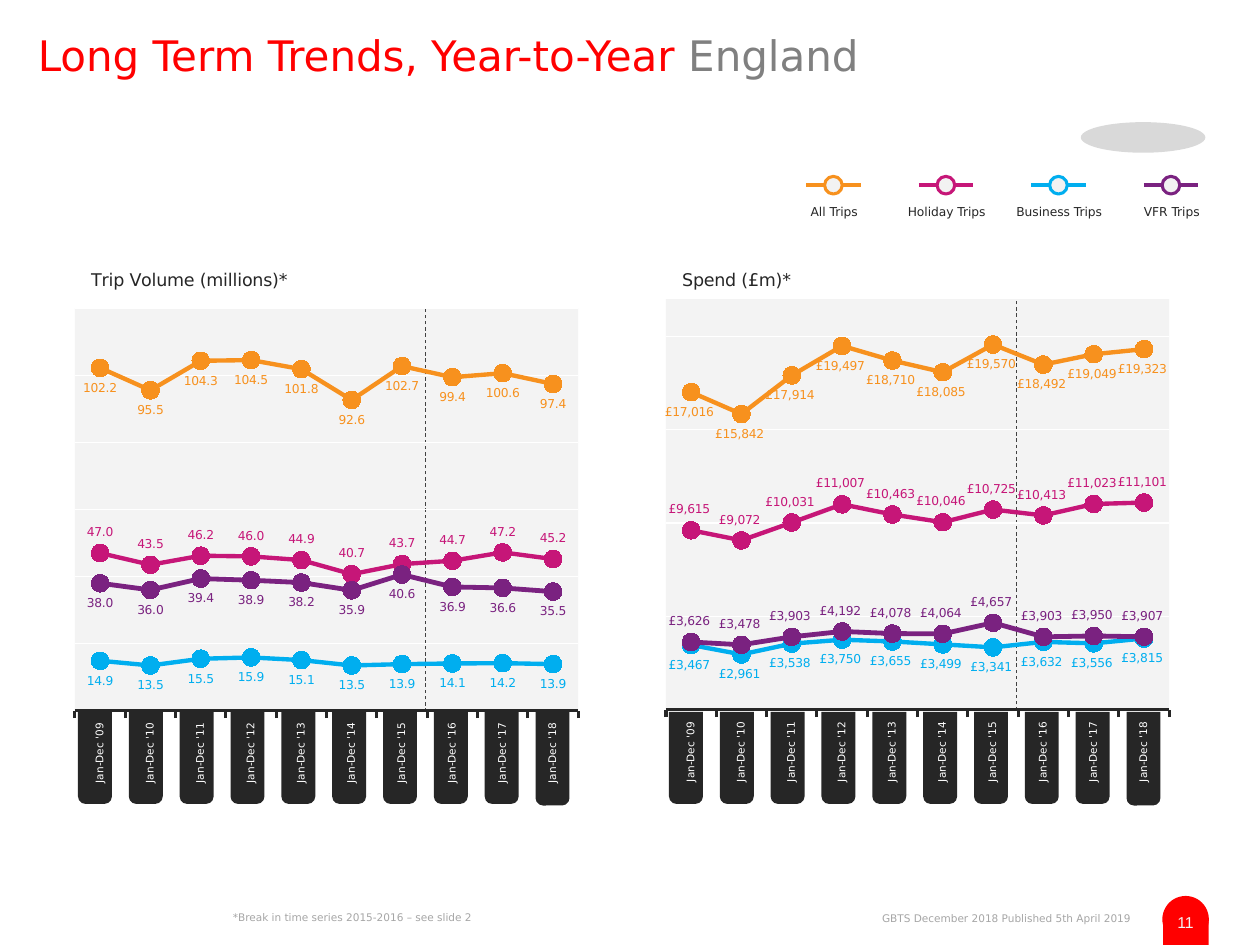
from copy import deepcopy
from dataclasses import dataclass

from lxml import etree
from pptx import Presentation
from pptx import util as u
from pptx.chart.data import CategoryChartData
from pptx.dml.color import RGBColor
from pptx.enum import chart as ch, dml, shapes, text
from pptx.oxml import parse_xml
from pptx.oxml.ns import nsdecls, qn

Pt = u.Pt
BELOW, ABOVE = ch.XL_LABEL_POSITION.BELOW, ch.XL_LABEL_POSITION.ABOVE
LEFT, CENTER, RIGHT = text.PP_ALIGN.LEFT, text.PP_ALIGN.CENTER, text.PP_ALIGN.RIGHT


@dataclass(frozen=True)
class Theme:
    font: str = "DejaVu Sans"
    number_font: str = "Arial"
    red: str = "FF0000"
    grey: str = "808080"
    note: str = "A6A6A6"
    dark: str = "262626"
    pale: str = "F2F2F2"
    plot: str = "D9D9D9"
    white: str = "FFFFFF"
    black: str = "000000"
    all_trips: str = "F7911E"
    holiday: str = "C61678"
    business: str = "00AEEF"
    vfr: str = "7A2280"
    title_size: float = 24
    chart_title_size: float = 10
    page_size: float = 9
    label_size: float = 7
    small_size: float = 6


T = Theme()
SERIES_COLORS = [T.all_trips, T.holiday, T.business, T.vfr]


def rgb(value):
    return RGBColor.from_string(value)


def set_alpha(fill_parent, percent):
    color = fill_parent.find(".//" + qn("a:srgbClr"))
    etree.SubElement(color, qn("a:alpha"), val=str(percent * 1000))


def layout_xml(x, y, w=None, h=None):
    inner = '<c:layoutTarget val="inner"/>' if w else ""
    modes = '<c:xMode val="edge"/><c:yMode val="edge"/>'
    parts = [("x", x), ("y", y), ("w", w), ("h", h)]
    sizes = "".join(f'<c:{k} val="{v}"/>' for k, v in parts if v is not None)
    return parse_xml(f'<c:layout {nsdecls("c")}><c:manualLayout>{inner}{modes}{sizes}'
                     "</c:manualLayout></c:layout>")


def set_layout(parent, index, layout):
    for old in parent.findall(qn("c:layout")):
        parent.remove(old)
    parent.insert(index, layout)


class Deck:
    def __init__(self, theme):
        self.t = theme
        self.prs = Presentation()
        self.prs.slide_width, self.prs.slide_height = Pt(720), Pt(540)
        self.s = self.prs.slides.add_slide(self.prs.slide_layouts[5])

    def style(self, font, size, color, name=None):
        font.size, font.name, font.bold = Pt(size), name or self.t.font, False
        font.color.rgb = rgb(color)

    def title(self, parts):
        sp = self.s.shapes.title
        sp.left, sp.top, sp.width, sp.height = Pt(0), Pt(0), Pt(720), Pt(101.5)
        tf = sp.text_frame
        tf.margin_left = tf.margin_right = Pt(21.6)
        tf.margin_top, tf.margin_bottom = Pt(16.6), Pt(0)
        tf.vertical_anchor, tf.word_wrap = text.MSO_ANCHOR.TOP, True
        p = tf.paragraphs[0]
        p.alignment, p.space_after = LEFT, Pt(6)
        for words, color in parts:
            r = p.add_run()
            r.text = words
            self.style(r.font, self.t.title_size, color)

    def text(self, x, y, w, h, words, size, color, align=LEFT, parent=None):
        tf = (parent or self.s).shapes.add_textbox(Pt(x), Pt(y), Pt(w), Pt(h)).text_frame
        tf.word_wrap = True
        tf.text = words
        tf.paragraphs[0].alignment = align
        self.style(tf.paragraphs[0].runs[0].font, size, color)

    def shape(self, kind, x, y, w, h, fill, line=None, parent=None):
        sp = (parent or self.s).shapes.add_shape(kind, Pt(x), Pt(y), Pt(w), Pt(h))
        sp.shadow.inherit = False
        sp.fill.solid()
        sp.fill.fore_color.rgb = rgb(fill)
        if line:
            sp.line.color.rgb, sp.line.width = rgb(line), Pt(1.75)
        else:
            sp.line.fill.background()
        return sp

    def line(self, x1, y1, x2, y2, color, width, dash=None, parent=None):
        cx = (parent or self.s).shapes.add_connector(
            shapes.MSO_CONNECTOR.STRAIGHT, Pt(x1), Pt(y1), Pt(x2), Pt(y2))
        cx.line.color.rgb, cx.line.width = rgb(color), Pt(width)
        if dash:
            cx.line.dash_style = dash
        etree.SubElement(cx._element.spPr, qn("a:effectLst"))

    def chart(self, x, title, title_at, plot_at, cats, rows, places, top, step, fmt):
        data = CategoryChartData(number_format=fmt)
        data.categories = cats
        for i, row in enumerate(rows, 1):
            data.add_series(f"Series {i}", row)
        c = self.s.shapes.add_chart(ch.XL_CHART_TYPE.LINE_MARKERS, Pt(x), Pt(139),
                                    Pt(309.6), Pt(319.7), data).chart
        self.style(c.font, 18, self.t.black)
        c.has_legend = False
        # Title and plot area
        c.has_title = True
        tf = c.chart_title.text_frame
        tf.text = title
        self.style(tf.paragraphs[0].runs[0].font, self.t.chart_title_size, self.t.dark)
        set_layout(c.chart_title._element, 1, layout_xml(*title_at))
        area = c._chartSpace.chart.plotArea
        set_layout(area, 0, layout_xml(*plot_at))
        sp_pr = parse_xml(f'<c:spPr {nsdecls("c", "a")}><a:solidFill><a:srgbClr '
                          f'val="{self.t.plot}"/></a:solidFill></c:spPr>')
        set_alpha(sp_pr, 30)
        area.append(sp_pr)
        # Axes
        cat, val = c.category_axis, c.value_axis
        cat.major_tick_mark = ch.XL_TICK_MARK.OUTSIDE
        cat.format.line.color.rgb, cat.format.line.width = rgb(self.t.dark), Pt(1.75)
        self.style(cat.tick_labels.font, self.t.small_size, self.t.white)
        body = cat._element.find(qn("c:txPr")).find(qn("a:bodyPr"))
        body.set("rot", "-5400000")
        body.set("vert", "horz")
        val.minimum_scale, val.maximum_scale, val.major_unit = 0, top, step
        val.has_major_gridlines = True
        grid = val.major_gridlines.format.line
        grid.color.rgb, grid.width = rgb(self.t.white), Pt(0.75)
        val.visible = False
        # Series
        c.plots[0].vary_by_categories = False
        for ser, color, place in zip(c.plots[0].series, SERIES_COLORS, places):
            ser.smooth = False
            ser.format.line.color.rgb = rgb(color)
            ser.format.line.width = Pt(2.75 if color == self.t.vfr else 2.5)
            ser.marker.style, ser.marker.size = ch.XL_MARKER_STYLE.CIRCLE, 10
            ser.marker.format.fill.solid()
            ser.marker.format.fill.fore_color.rgb = rgb(self.t.pale)
            ser.marker.format.line.color.rgb = rgb(color)
            labels = ser.data_labels
            labels.show_value, labels.position = True, place
            labels.number_format, labels.number_format_is_linked = fmt, False
            self.style(labels.font, self.t.label_size, color)


def main():
    d = Deck(T)
    kind = shapes.MSO_SHAPE

    # Page number tab and footers
    d.shape(kind.RECTANGLE, 664.6, 524.9, 26, 15.6, T.red)
    badge = d.shape(kind.OVAL, 664.2, 512, 26.6, 26.6, T.red)
    tf = badge.text_frame
    tf.margin_left = tf.margin_right = tf.margin_bottom = Pt(0)
    tf.margin_top = Pt(2.9)
    tf.text = "11"
    tf.paragraphs[0].alignment = CENTER
    d.style(tf.paragraphs[0].runs[0].font, T.page_size, T.pale, T.number_font)
    d.text(115.9, 517.5, 537.1, 14.4, "GBTS December 2018 Published 5th April 2019",
           T.small_size, T.note, RIGHT)
    d.text(126, 517, 336.2, 14.4, "*Break in time series 2015-2016 – see slide 2",
           T.small_size, T.note)

    # Title and shaded oval
    d.title([("Long Term Trends, Year-to-Year ", T.red), ("England", T.grey)])
    oval = d.shape(kind.OVAL, 617.6, 69.8, 71.2, 17.5, T.black)
    set_alpha(oval._element.spPr, 15)

    # Legend
    legend = d.s.shapes.add_group_shape()
    keys = ["All Trips", "Holiday Trips", "Business Trips", "VFR Trips"]
    for i, (name, color) in enumerate(zip(keys, SERIES_COLORS)):
        x = 460.8 + 64.3 * i
        holder = type("Holder", (), {"shapes": legend.shapes})
        d.line(x, 105.8, x + 31, 105.8, color, 2.5, parent=holder)
        d.shape(kind.OVAL, x + 10.4, 100.8, 10.1, 10.1, T.pale, color, holder)
        d.text(x - 17.6, 113, 67, 15.8, name, T.label_size, T.dark, CENTER, holder)

    # Year tabs behind the axis labels
    years = [f"Jan-Dec '{y:02}" for y in range(9, 19)]
    for left in (44.6, 382.3):
        for i in range(len(years)):
            height = 53.5 if i == len(years) - 1 else 52.6
            tab = d.shape(kind.ROUND_2_SAME_RECTANGLE, left + 29.05 * i, 406.8,
                          19.4, height, T.dark)
            tab.adjustments[0], tab.adjustments[1] = 0, 0.22

    # Breaks in the time series
    for x, bottom, top in ((243.4, 406.8, 175), (581, 406.1, 172.1)):
        d.line(x, bottom, x, top, T.black, 0.5, dml.MSO_LINE.DASH)

    # Charts
    volume = [
        [102.2, 95.5, 104.3, 104.5, 101.8, 92.6, 102.7, 99.4, 100.6, 97.4],
        [47, 43.5, 46.2, 46, 44.9, 40.7, 43.7, 44.7, 47.2, 45.2],
        [14.9, 13.5, 15.5, 15.9, 15.1, 13.5, 13.9, 14.1, 14.2, 13.9],
        [38, 36, 39.4, 38.9, 38.2, 35.9, 40.6, 36.9, 36.6, 35.5]]
    spend = [
        [17016, 15842, 17914, 19497, 18710, 18085, 19570, 18492, 19049, 19323],
        [9615, 9072, 10031, 11007, 10463, 10046, 10725, 10413, 11023, 11101],
        [3467, 2961, 3538, 3750, 3655, 3499, 3341, 3632, 3556, 3815],
        [3626, 3478, 3903, 4192, 4078, 4064, 4657, 3903, 3950, 3907]]
    d.chart(31.7, "Trip Volume (millions)*", (0.06, 0.04), (0.036, 0.116, 0.929, 0.72),
            years, volume, [BELOW, ABOVE, BELOW, BELOW], 120, 20, "0.0")
    d.chart(369.4, "Spend (£m)*", (0.06, 0.04), (0.036, 0.1, 0.929, 0.734),
            years, spend, [BELOW, ABOVE, BELOW, ABOVE], 22000, 5000,
            '"£"#,##0_);[Red]\\("£"#,##0\\)')

    d.prs.save("out.pptx")


if __name__ == "__main__":
    main()
